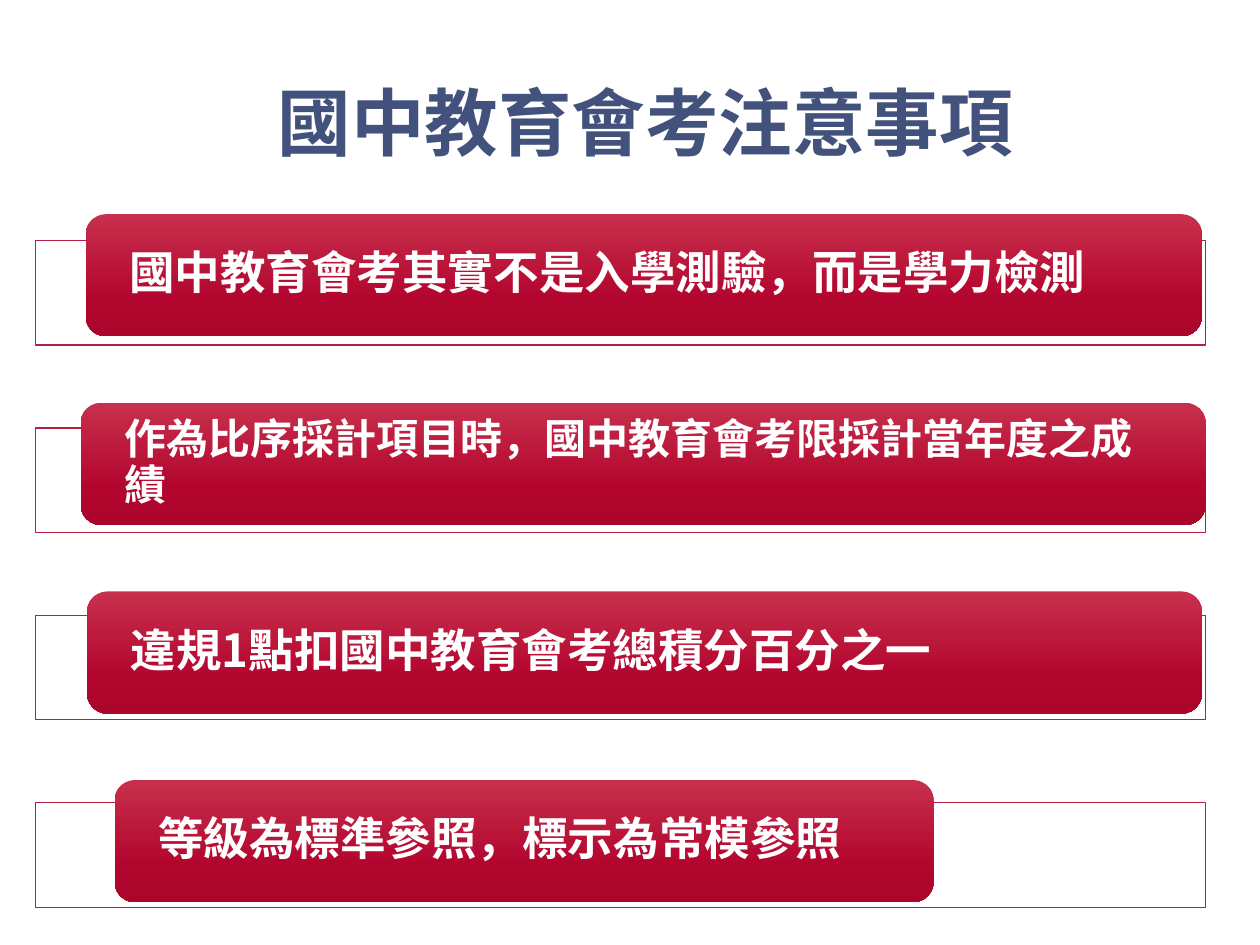
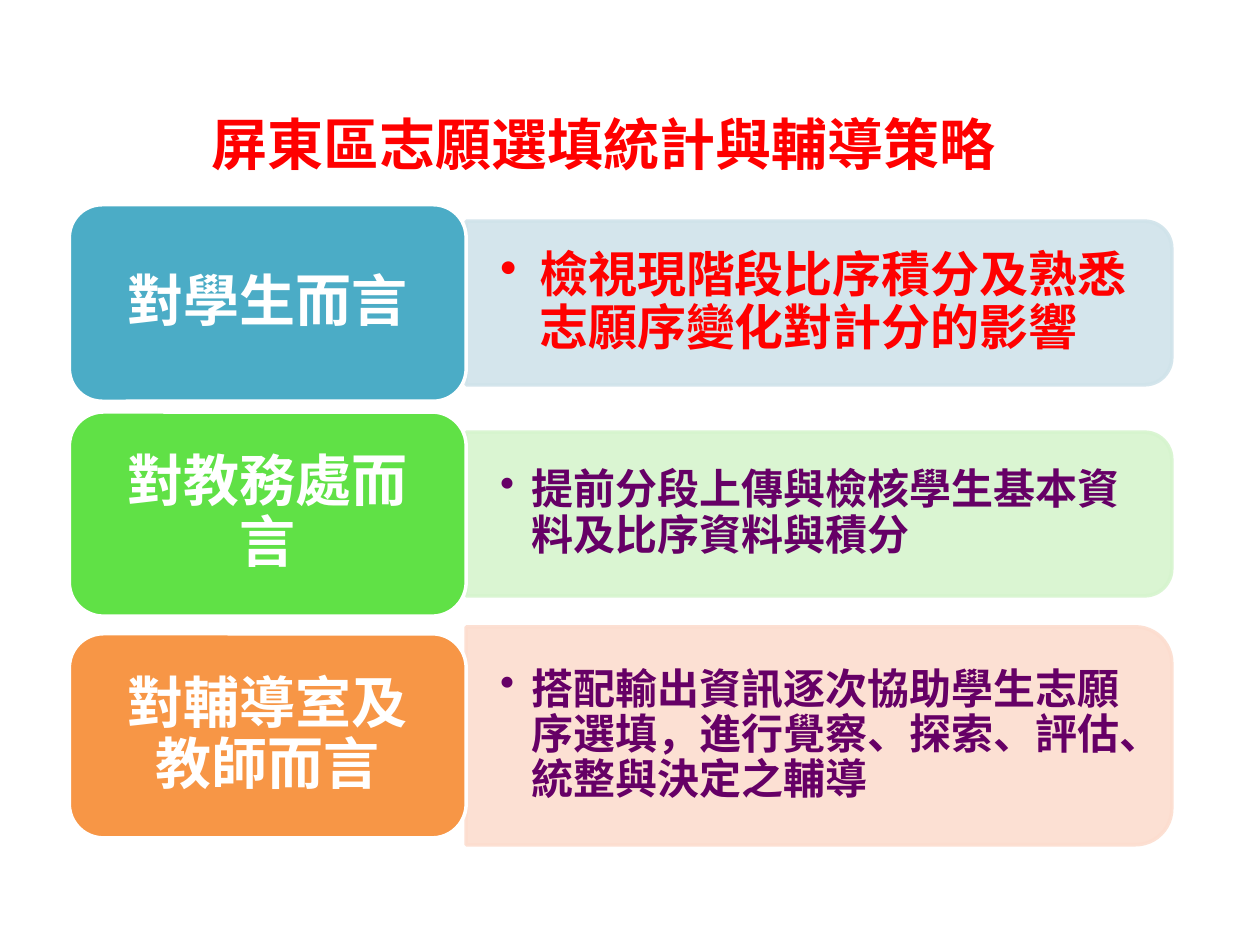
from copy import deepcopy

from lxml import etree
from pptx import Presentation
from pptx import util as u
from pptx.dml.color import RGBColor
from pptx.enum import shapes, text
from pptx.oxml.ns import qn

COLUMNS, ROWS = 100, 75
FONT = "Noto Sans CJK SC"
WHITE, RED, PURPLE = "FFFFFF", "FF0000", "660066"
NAVY, CRIMSON = "42527C", "B71E42"
BAR_STOPS = [(0, "C7304C"), (0.69, "B3062F"), (1, "AA062C")]


def rgb(code):
    return RGBColor.from_string(code)


def make_translucent(color_parent):
    color = color_parent.find(qn("a:solidFill")).find(qn("a:srgbClr"))
    etree.SubElement(color, qn("a:alpha"), val="90000")


class Painter:
    """Holds the deck, its grid and the current page."""

    def __init__(self):
        self.deck = Presentation()
        self.deck.slide_width, self.deck.slide_height = u.Inches(10), u.Inches(7.5)
        self.page = None

    def grid(self, left, top, width, height):
        column = self.deck.slide_width / COLUMNS
        row = self.deck.slide_height / ROWS
        return [round(n * step) for n, step in
                ((left, column), (top, row), (width, column), (height, row))]

    def add_page(self):
        self.page = self.deck.slides.add_slide(self.deck.slide_layouts[5])

    def title(self, area, words, size, color, align, anchor):
        box = self.page.shapes.title
        box.left, box.top, box.width, box.height = self.grid(*area)
        self.set_words(box, words, size, color, align, anchor, inset=(0.1, 0.05))

    def set_words(self, box, words, size, color, align=text.PP_ALIGN.LEFT,
                  anchor=text.MSO_ANCHOR.MIDDLE, inset=(0.3, 0), hang=0):
        frame = box.text_frame
        frame.word_wrap = True
        frame.auto_size = text.MSO_AUTO_SIZE.NONE
        frame.vertical_anchor = anchor
        frame.margin_left = frame.margin_right = u.Inches(inset[0])
        frame.margin_top = frame.margin_bottom = u.Inches(inset[1])
        para = frame.paragraphs[0]
        para.text = words
        para.alignment, para.line_spacing = align, 0.9
        if hang:
            props = para._p.get_or_add_pPr()
            props.set("marL", str(u.Inches(hang)))
            props.set("indent", str(-u.Inches(hang)))
            etree.SubElement(props, qn("a:buChar"), char="•")
        font = para.font
        font.name, font.size, font.bold = FONT, u.Pt(size), True
        font.color.rgb = rgb(color)
        etree.SubElement(font._element, qn("a:ea"), typeface=FONT)

    def shape(self, kind, area, fill=None, line=None, weight=2):
        shape = self.page.shapes.add_shape(kind, *self.grid(*area))
        shape.shadow.inherit = False
        if fill:
            shape.fill.solid()
            shape.fill.fore_color.rgb = rgb(fill)
        if line:
            shape.line.color.rgb = rgb(line)
            shape.line.width = u.Pt(weight)
        else:
            shape.line.fill.background()
        return shape

    def frame(self, area):
        frame = self.shape(shapes.MSO_SHAPE.RECTANGLE, area, WHITE, CRIMSON, 0.75)
        make_translucent(frame._element.spPr)

    def gradient_bar(self, area, words, size):
        bar = self.shape(shapes.MSO_SHAPE.ROUNDED_RECTANGLE, area)
        bar.fill.gradient()
        bar.fill.gradient_angle = 270
        stop_list = next(bar._element.spPr.iter(qn("a:gsLst")))
        stop_list.append(deepcopy(stop_list[-1]))
        for stop, (position, color) in zip(bar.fill.gradient_stops, BAR_STOPS):
            stop.position, stop.color.rgb = position, rgb(color)
        self.set_words(bar, words, size, WHITE)

    def tab(self, area, words, fill):
        tab = self.shape(shapes.MSO_SHAPE.ROUNDED_RECTANGLE, area, fill, WHITE)
        self.set_words(tab, words, 32, WHITE, text.PP_ALIGN.CENTER, inset=(0.2, 0.15))

    def panel(self, left, middle, width, height, fill):
        """A block with rounded right corners: an upright shape turned by 90°."""
        area = (left + (width - height) / 2, middle - width / 2, height, width)
        panel = self.shape(shapes.MSO_SHAPE.ROUND_2_SAME_RECTANGLE, area, fill, fill)
        panel.rotation = 90
        make_translucent(panel._element.spPr)
        make_translucent(panel._element.spPr.find(qn("a:ln")))

    def bullet(self, area, words, size, color, hang):
        box = self.page.shapes.add_textbox(*self.grid(*area))
        self.set_words(box, words, size, color, inset=(0.27, 0.14), hang=hang)


def exam_notes(painter):
    painter.add_page()
    painter.title((18.5, 6, 65.4, 8.1), "國中教育會考注意事項", 42, NAVY,
                  text.PP_ALIGN.CENTER, text.MSO_ANCHOR.MIDDLE)
    notes = [  # left, width, size, words
        (6.8, 88.6, 26, "國中教育會考其實不是入學測驗，而是學力檢測"),
        (6.4, 89.3, 24, "作為比序採計項目時，國中教育會考限採計當年度之成績"),
        (6.9, 88.5, 26, "違規1點扣國中教育會考總積分百分之一"),
        (9.1, 65, 26, "等級為標準參照，標示為常模參照"),
    ]
    for index, (left, width, size, words) in enumerate(notes):
        painter.frame((2.8, 19.1 + 14.87 * index, 92.9, 8.3))
        painter.gradient_bar((left, 17 + 14.97 * index, width, 9.7), words, size)


def guidance_strategies(painter):
    painter.add_page()
    painter.title((15.8, 8.8, 71.9, 11.5), "屏東區志願選填統計與輔導策略", 32, RED,
                  text.PP_ALIGN.LEFT, text.MSO_ANCHOR.TOP)
    tab_left, tab_width, panel_width = 5.5, 31.5, 56
    panel_left = tab_left + tab_width
    groups = [  # middle, tab height, panel height, tab and panel fill, label, bullet
        (24.05, 15.6, 13, "4BACC6", "D0E3EA", "對學生而言",
         ("檢視現階段比序積分及熟悉志願序變化對計分的影響", 28, RED, 0.31)),
        (40.8, 16.2, 13, "60E146", "D6F4CE", "對教務處而言",
         ("提前分段上傳與檢核學生基本資料及比序資料與積分", 24, PURPLE, 0.25)),
        (58.4, 16.2, 17.3, "F79646", "FCDDCF", "對輔導室及教師而言",
         ("搭配輸出資訊逐次協助學生志願序選填，進行覺察、探索、評估、統整與決定之輔導",
          24, PURPLE, 0.25)),
    ]
    for middle, tab_height, panel_height, dark, pale, label, bullet in groups:
        text_height = 0.9 * panel_height
        painter.panel(panel_left, middle, panel_width, panel_height, pale)
        painter.bullet((panel_left, middle - text_height / 2, 55.4, text_height), *bullet)
        painter.tab((tab_left, middle - tab_height / 2, tab_width, tab_height), label, dark)


def main():
    painter = Painter()
    exam_notes(painter)
    guidance_strategies(painter)
    painter.deck.save("out.pptx")


if __name__ == "__main__":
    main()
